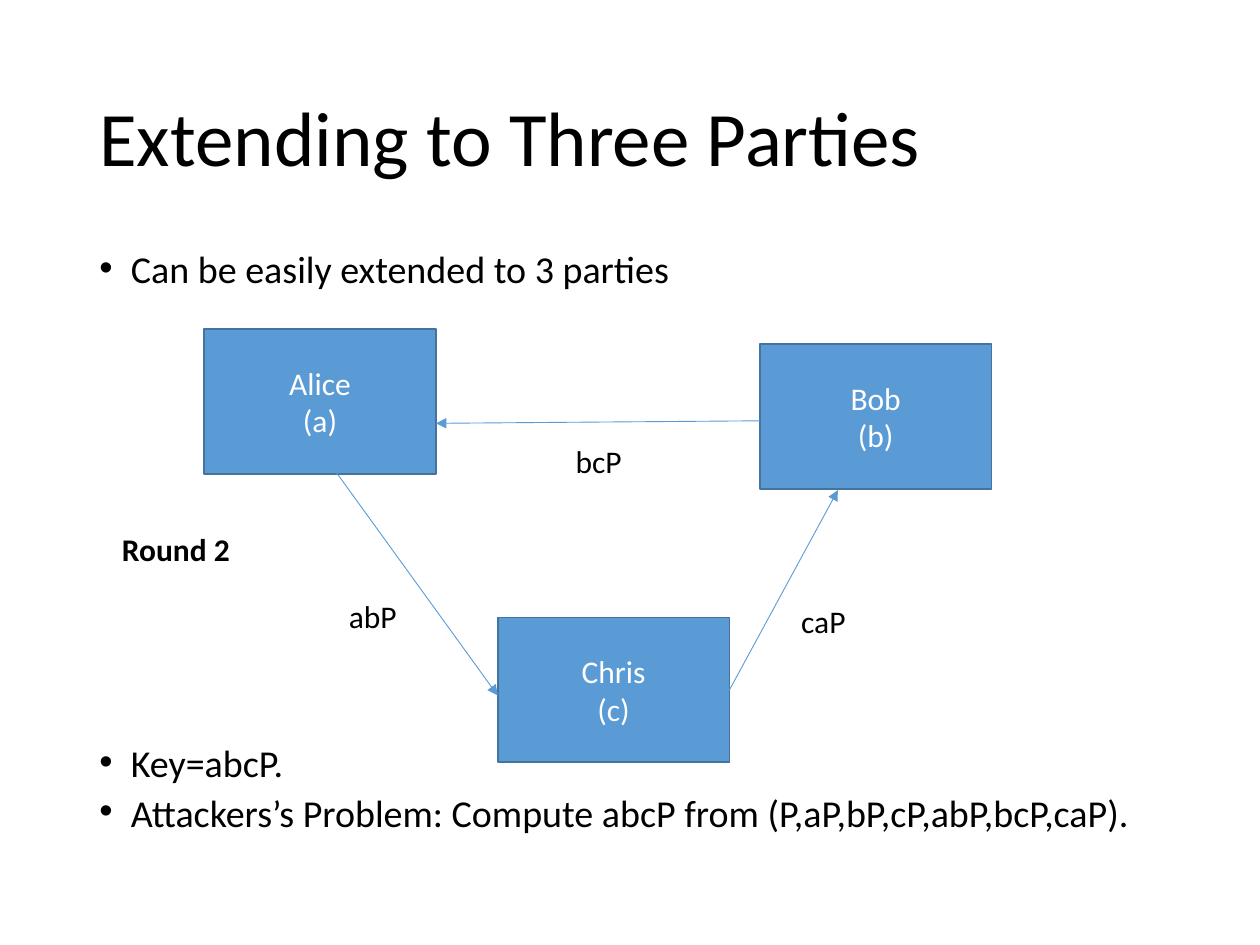
from dataclasses import dataclass

from lxml import etree
from pptx import Presentation
from pptx.dml.color import RGBColor
from pptx.enum.shapes import MSO_CONNECTOR, MSO_SHAPE
from pptx.enum.text import MSO_ANCHOR, MSO_AUTO_SIZE, PP_ALIGN
from pptx.oxml.ns import qn
from pptx.util import Inches, Pt

RECTANGLE = MSO_SHAPE.RECTANGLE
STRAIGHT = MSO_CONNECTOR.STRAIGHT
TOP, MIDDLE = MSO_ANCHOR.TOP, MSO_ANCHOR.MIDDLE
LEFT, CENTER = PP_ALIGN.LEFT, PP_ALIGN.CENTER
GROW = MSO_AUTO_SIZE.SHAPE_TO_FIT_TEXT
RIGHT_SIDE = 3

COLUMNS, ROWS = 100, 75
CELL = Inches(0.1)
PARTY_SIZE = (18.4, 11.5)
LABEL_SIZE = (13.8, 4)


@dataclass(frozen=True)
class Theme:
    """Colours, font and type sizes of the slide."""

    font: str = "Calibri"
    ink: RGBColor = RGBColor(0x00, 0x00, 0x00)
    paper: RGBColor = RGBColor(0xFF, 0xFF, 0xFF)
    accent: RGBColor = RGBColor(0x5B, 0x9B, 0xD5)
    outline: RGBColor = RGBColor(0x43, 0x73, 0x9E)
    title: float = 44
    body: float = 21.7
    label: float = 18


THEME = Theme()


def grid(*cells):
    """Turn counts of grid cells into slide lengths."""
    return [round(cell * CELL) for cell in cells]


def apply_format(target, values):
    """Set each named attribute of the target."""
    for name, value in values.items():
        setattr(target, name, value)


def write_lines(shape, lines, size, color=THEME.ink, bold=False, frame=None, paragraph_format=None):
    """Fill a shape with one formatted paragraph per line."""
    text_frame = shape.text_frame
    apply_format(text_frame, {"word_wrap": True, "vertical_anchor": TOP, **(frame or {})})
    text_frame.text = "\n".join(lines)
    for paragraph in text_frame.paragraphs:
        apply_format(paragraph, {"alignment": LEFT, **(paragraph_format or {})})
        for run in paragraph.runs:
            apply_format(run.font, {"name": THEME.font, "size": Pt(size), "bold": bold})
            run.font.color.rgb = color
    return text_frame.paragraphs


def add_text(slide, position, size, lines, type_size, **options):
    """Add a text box on the grid and return its paragraphs."""
    text_box = slide.shapes.add_textbox(*grid(*position, *size))
    return write_lines(text_box, lines, type_size, **options)


def add_bullets(slide, position, size, lines, gaps):
    """Add a bulleted list with the given space before each item."""
    paragraphs = add_text(slide, position, size, lines, THEME.body,
                          paragraph_format={"line_spacing": 0.7})
    for paragraph, gap in zip(paragraphs, gaps):
        paragraph.space_before = Pt(gap)
        properties = paragraph._p.get_or_add_pPr()
        properties.set("marL", str(Inches(0.25)))
        properties.set("indent", str(Inches(-0.25)))
        etree.SubElement(properties, qn("a:buFont"), typeface="Arial")
        etree.SubElement(properties, qn("a:buChar"), char="•")


def add_party(slide, position, name, secret):
    """Add a box for one party with its secret."""
    party = slide.shapes.add_shape(RECTANGLE, *grid(*position, *PARTY_SIZE))
    party.shadow.inherit = False
    party.fill.solid()
    party.fill.fore_color.rgb = THEME.accent
    party.line.color.rgb = THEME.outline
    party.line.width = Pt(1)
    write_lines(party, [name, f"({secret})"], THEME.label, color=THEME.paper,
                frame={"vertical_anchor": MIDDLE}, paragraph_format={"alignment": CENTER})
    return party


def add_arrow(slide, start, end):
    """Add a thin arrow pointing at its end."""
    arrow = slide.shapes.add_connector(STRAIGHT, *grid(*start, *end))
    arrow.line.color.rgb = THEME.accent
    arrow.line.width = Pt(0.5)
    etree.SubElement(arrow.line._get_or_add_ln(), qn("a:tailEnd"), type="triangle")
    etree.SubElement(arrow._element.spPr, qn("a:effectLst"))
    return arrow


def main():
    """Build the slide and save it."""
    presentation = Presentation()
    width, height = grid(COLUMNS, ROWS)
    apply_format(presentation, {"slide_width": width, "slide_height": height})
    slide = presentation.slides.add_slide(presentation.slide_layouts[6])

    add_text(slide, (6.9, 4), (86.2, 14.5), ["Extending to Three Parties"], THEME.title,
             frame={"vertical_anchor": MIDDLE}, paragraph_format={"line_spacing": 0.9})
    add_bullets(slide, (6.9, 20), (86.2, 52.5), [
        "Can be easily extended to 3 parties",
        "Key=abcP.",
        "Attackers’s Problem: Compute abcP from (P,aP,bP,cP,abP,bcP,caP).",
    ], gaps=(10, 264, 10))

    add_party(slide, (16.2, 26.1), "Alice", "a")
    add_party(slide, (60.3, 27.3), "Bob", "b")
    chris = add_party(slide, (39.5, 49), "Chris", "c")

    add_arrow(slide, (26.7, 37.5), (39.5, 55.2))
    add_arrow(slide, (60.3, 33.4), (34.6, 33.6))
    add_arrow(slide, (57.9, 54.7), (66.5, 38.9)).begin_connect(chris, RIGHT_SIDE)

    for message, position in (("abP", (26.7, 46.9)), ("bcP", (44.7, 34.6)), ("caP", (62.6, 47.3))):
        add_text(slide, position, LABEL_SIZE, [message], THEME.label, frame={"auto_size": GROW})
    add_text(slide, (8.7, 41.6), (16.3, 4), ["Round 2"], THEME.label, bold=True,
             frame={"auto_size": GROW})

    presentation.save("out.pptx")


if __name__ == "__main__":
    main()
